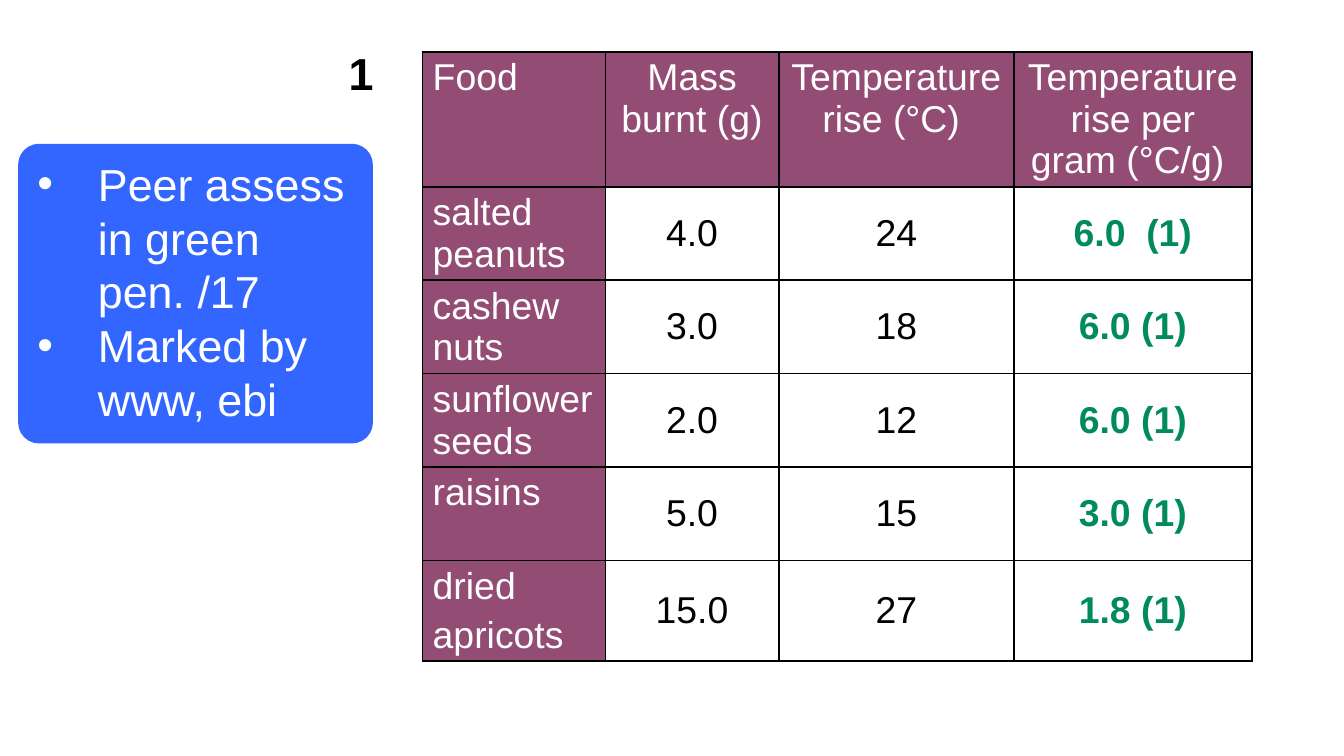
import dataclasses
import pptx
import pptx.dml.color
import pptx.enum.shapes
import pptx.enum.text
import pptx.oxml
import pptx.oxml.ns
import pptx.util

COLS, ROWS = 100, 56.25
UNIT = pptx.util.Inches(0.1)
ALIGN = pptx.enum.text.PP_ALIGN
MID = pptx.enum.text.MSO_ANCHOR.MIDDLE
TOP = pptx.enum.text.MSO_ANCHOR.TOP


@dataclasses.dataclass(frozen=True)
class Theme:
    font: str = "Arial"
    plum: str = "934C74"
    blue: str = "3366FF"
    green: str = "008B5D"
    white: str = "FFFFFF"
    black: str = "000000"
    small: int = 20
    large: int = 24


@dataclasses.dataclass(frozen=True)
class Box:
    left: float
    top: float
    width: float
    height: float

    def place(self):
        parts = (self.left, self.top, self.width, self.height)
        return [round(part * UNIT) for part in parts]


THEME = Theme()
HEAD = ["Food", "Mass burnt (g)", "Temperature rise (°C) ",
        "Temperature rise per gram (°C/g) "]
FOODS = [
    ["salted peanuts", "4.0", "24", "6.0  (1)"],
    ["cashew\nnuts", "3.0", "18", "6.0 (1)"],
    ["sunflower seeds", "2.0", "12", "6.0 (1)"],
    ["raisins", "5.0", "15", "3.0 (1)"],
    ["dried\napricots", "15.0", "27", "1.8 (1)"],
]
TASKS = ["Peer assess in green pen. /17", "Marked by www, ebi"]
WIDE = [13.6, 12.9, 17.5, 17.7]
TALL = [10] + [6.95] * 4 + [7.5]


def tint(name):
    return pptx.dml.color.RGBColor.from_string(name)


def style(para, size, color, bold=False, align=ALIGN.LEFT):
    para.alignment = align
    para.font.name = THEME.font
    para.font.size = pptx.util.Pt(size)
    para.font.bold = bold
    para.font.color.rgb = tint(color)


def add_xml(node, tag, body):
    space = pptx.oxml.ns.nsdecls("a")
    node.append(pptx.oxml.parse_xml(f"<a:{tag} {space} {body}</a:{tag}>"))


def rule(cell):
    props = cell._tc.get_or_add_tcPr()
    for side in ("lnL", "lnR", "lnT", "lnB"):
        add_xml(props, side, f'w="{pptx.util.Pt(1)}"><a:solidFill>'
                f'<a:srgbClr val="{THEME.black}"/></a:solidFill>')


def fill_cell(cell, text, row, col):
    label = row == 0 or col == 0
    result = col == 3 and not label
    cell.margin_left = cell.margin_right = pptx.util.Pt(5.4)
    cell.margin_top = cell.margin_bottom = pptx.util.Pt(2.7)
    cell.vertical_anchor = TOP if label else MID
    rule(cell)
    if label:
        cell.fill.solid()
        cell.fill.fore_color.rgb = tint(THEME.plum)
    else:
        cell.fill.background()
    color = THEME.white if label else THEME.green if result else THEME.black
    cell.text = text
    for para in cell.text_frame.paragraphs:
        style(para, THEME.small, color, result,
              ALIGN.CENTER if col else ALIGN.LEFT)


def food_table(slide, box):
    data = [HEAD] + FOODS
    grid = slide.shapes.add_table(len(data), len(HEAD), *box.place()).table
    grid.first_row = grid.horz_banding = False
    for col, share in zip(grid.columns, WIDE):
        col.width = round(box.width * UNIT * share / sum(WIDE))
    for row, share in zip(grid.rows, TALL):
        row.height = round(box.height * UNIT * share / sum(TALL))
    for row, line in enumerate(data):
        for col, text in enumerate(line):
            fill_cell(grid.cell(row, col), text, row, col)
    last = grid.cell(len(FOODS), 0).text_frame.paragraphs[-1]
    last.space_before = pptx.util.Pt(THEME.small * 0.2)


def number(slide, box):
    frame = slide.shapes.add_textbox(*box.place()).text_frame
    frame.word_wrap = True
    frame.text = "1"
    style(frame.paragraphs[0], THEME.large, THEME.black, True)


def task_card(slide, box):
    kind = pptx.enum.shapes.MSO_SHAPE.ROUNDED_RECTANGLE
    card = slide.shapes.add_shape(kind, *box.place())
    card.adjustments[0] = 0.07
    card.shadow.inherit = False
    card.fill.solid()
    card.fill.fore_color.rgb = tint(THEME.blue)
    card.line.fill.background()
    frame = card.text_frame
    frame.word_wrap = True
    frame.vertical_anchor = TOP
    frame.text = "\n".join(TASKS)
    dent = pptx.util.Inches(0.45)
    for para in frame.paragraphs:
        props = para._p.get_or_add_pPr()
        props.set("marL", str(dent))
        props.set("indent", str(-dent))
        add_xml(props, "buFont", f'typeface="{THEME.font}">')
        add_xml(props, "buChar", 'char="•">')
        add_xml(props, "tabLst", f'><a:tab pos="{dent}" algn="l"/>')
        style(para, THEME.large, THEME.white)


def main():
    deck = pptx.Presentation()
    deck.slide_width = round(COLS * UNIT)
    deck.slide_height = round(ROWS * UNIT)
    slide = deck.slides.add_slide(deck.slide_layouts[6])
    food_table(slide, Box(31.45, 3.85, sum(WIDE), sum(TALL)))
    number(slide, Box(24.95, 2.9, 5.5, 5))
    task_card(slide, Box(1.35, 10.7, 26.4, 22.3))
    deck.save("out.pptx")


if __name__ == "__main__":
    main()
